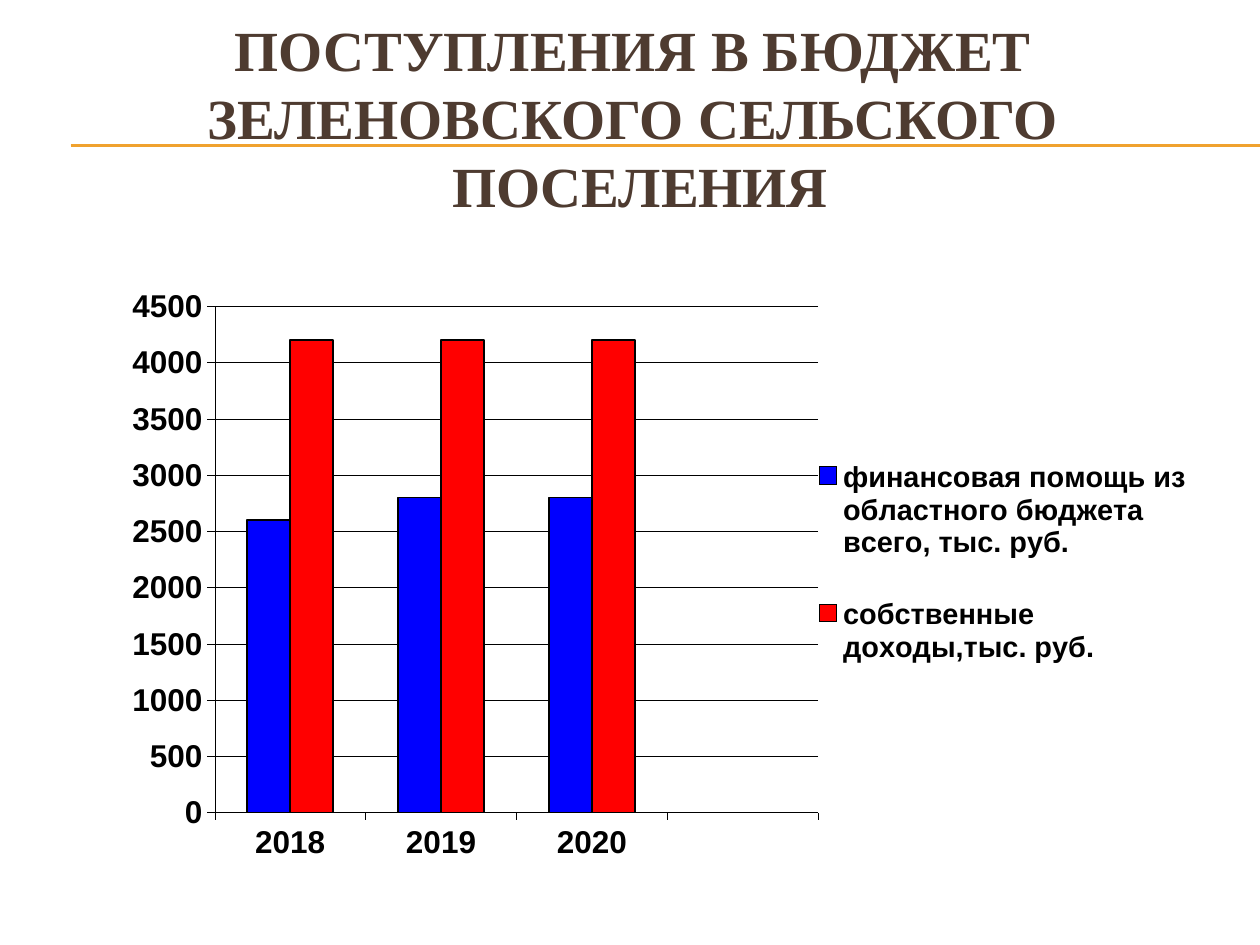
from lxml.etree import SubElement
from pptx import Presentation
from pptx.chart.data import CategoryChartData
from pptx.dml.color import RGBColor
from pptx.enum.chart import XL_CHART_TYPE, XL_LEGEND_POSITION, XL_TICK_LABEL_POSITION, XL_TICK_MARK
from pptx.enum.shapes import MSO_CONNECTOR
from pptx.enum.text import MSO_ANCHOR, MSO_AUTO_SIZE, PP_ALIGN
from pptx.oxml import parse_xml
from pptx.oxml.ns import nsdecls, qn
from pptx.util import Inches, Pt

TITLE = "ПОСТУПЛЕНИЯ В БЮДЖЕТ \vЗЕЛЕНОВСКОГО СЕЛЬСКОГО \vПОСЕЛЕНИЯ"
YEARS = ["2018", "2019", "2020", ""]
SERIES = [
    ("финансовая помощь из областного бюджета всего, тыс. руб.", [2600, 2800, 2800, None], "0000FF"),
    ("собственные доходы,тыс. руб.", [4200, 4200, 4200, None], "FF0000"),
]


def color(value):
    return RGBColor.from_string(value)


def format_font(font, name, size, font_color):
    for attribute, value in {"name": name, "size": Pt(size), "bold": True}.items():
        setattr(font, attribute, value)
    font.color.rgb = color(font_color)


def format_line(line, line_color, width):
    line.color.rgb = color(line_color)
    line.width = Pt(width)


def add_rule(slide, top):
    rule = slide.shapes.add_connector(
        MSO_CONNECTOR.STRAIGHT, Inches(0.56), Inches(top), Inches(10), Inches(top))
    format_line(rule.line, "F0A22E", 0.75)
    SubElement(rule._element.spPr, qn("a:effectLst"))


def format_title(title):
    box = {"left": 0.33, "top": 0.5, "width": 9.5, "height": 1.39}
    for attribute, value in box.items():
        setattr(title, attribute, Inches(value))
    frame = title.text_frame
    frame.text = TITLE
    settings = {"auto_size": MSO_AUTO_SIZE.NONE, "word_wrap": True,
                "vertical_anchor": MSO_ANCHOR.MIDDLE, "margin_bottom": Inches(0.59)}
    for attribute, value in settings.items():
        setattr(frame, attribute, value)
    paragraph = frame.paragraphs[0]
    paragraph.alignment = PP_ALIGN.CENTER
    for run in paragraph.runs:
        format_font(run.font, "Times New Roman", 32.4, "4E3B30")


def manual_layout(left, top, width, height, inner=False):
    """Return a c:layout element with fractions of the chart area."""
    target = '<c:layoutTarget val="inner"/>' if inner else ""
    return parse_xml(
        f'<c:layout {nsdecls("c")}><c:manualLayout>{target}'
        '<c:xMode val="edge"/><c:yMode val="edge"/>'
        f'<c:x val="{left}"/><c:y val="{top}"/><c:w val="{width}"/><c:h val="{height}"/>'
        "</c:manualLayout></c:layout>")


def format_axis(axis):
    axis.major_tick_mark = XL_TICK_MARK.OUTSIDE
    axis.minor_tick_mark = XL_TICK_MARK.NONE
    format_font(axis.tick_labels.font, "Arial", 18, "000000")
    format_line(axis.format.line, "000000", 0.25)


def format_legend(chart):
    chart.has_legend = True
    legend = chart.legend
    legend.position = XL_LEGEND_POSITION.RIGHT
    legend.include_in_layout = False
    format_font(legend.font, "Arial", 16.5, "000000")
    element = legend._element
    for layout in element.findall(qn("c:layout")):
        element.remove(layout)
    element.find(qn("c:legendPos")).addnext(manual_layout(0.65, 0.24, 0.35, 0.46))


def add_income_chart(slide):
    data = CategoryChartData(number_format="General")
    data.categories = YEARS
    for name, values, _ in SERIES:
        data.add_series(name, values)
    chart = slide.shapes.add_chart(
        XL_CHART_TYPE.COLUMN_CLUSTERED,
        Inches(0.64), Inches(2.19), Inches(8.87), Inches(4.84), data).chart
    chart.has_title = False
    format_font(chart.font, "Arial", 18, "000000")

    plot = chart.plots[0]
    plot.gap_width = 150
    plot.overlap = 0
    plot.vary_by_categories = False
    for series, (_, _, fill_color) in zip(plot.series, SERIES):
        series.format.fill.solid()
        series.format.fill.fore_color.rgb = color(fill_color)
        format_line(series.format.line, "000000", 1)

    for axis in (chart.category_axis, chart.value_axis):
        format_axis(axis)
    chart.category_axis.tick_label_position = XL_TICK_LABEL_POSITION.LOW
    chart.value_axis.minimum_scale = 0
    chart.value_axis.maximum_scale = 4500
    chart.value_axis.major_unit = 500
    chart.value_axis.has_major_gridlines = True
    format_line(chart.value_axis.major_gridlines.format.line, "000000", 0.25)

    format_legend(chart)
    plot_area = chart._chartSpace.chart.plotArea
    for layout in plot_area.findall(qn("c:layout")):
        plot_area.remove(layout)
    plot_area.insert(0, manual_layout(0.12, 0.05, 0.54, 0.83, inner=True))


def main():
    presentation = Presentation()
    presentation.slide_width = Inches(10)
    presentation.slide_height = Inches(7.5)
    slide = presentation.slides.add_slide(presentation.slide_layouts[5])
    for top in (1.15, 1.16):
        add_rule(slide, top)
    format_title(slide.shapes.title)
    add_income_chart(slide)
    presentation.save("out.pptx")


if __name__ == "__main__":
    main()
